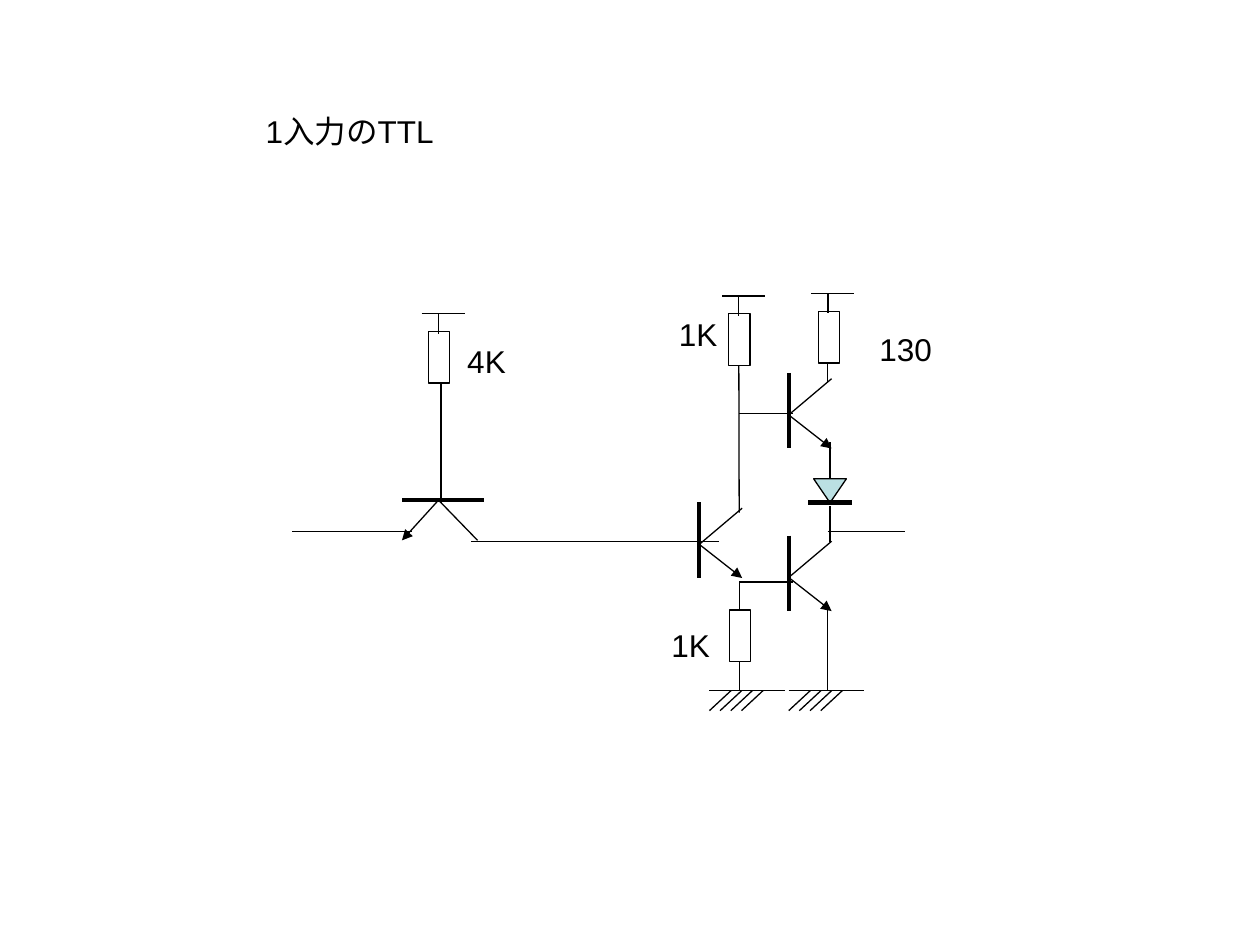
from dataclasses import dataclass

from lxml import etree
from pptx import Presentation
from pptx.dml.color import RGBColor
from pptx.enum.shapes import MSO_CONNECTOR, MSO_SHAPE
from pptx.oxml.ns import qn
from pptx.util import Pt

STRAIGHT = MSO_CONNECTOR.STRAIGHT
RECTANGLE = MSO_SHAPE.RECTANGLE
TRIANGLE = MSO_SHAPE.ISOSCELES_TRIANGLE


@dataclass(frozen=True)
class Theme:
    ink: RGBColor = RGBColor(0, 0, 0)
    diode: RGBColor = RGBColor(0xBB, 0xE0, 0xE3)
    font: str = "Arial"
    text_size: float = 18
    thin: float = 0.75
    base_bar: float = 2.25
    diode_bar: float = 3


class Circuit:
    def __init__(self, slide, theme):
        self.slide = slide
        self.theme = theme

    def wire(self, x1, y1, x2, y2, width=None, arrow=False):
        connector = self.slide.shapes.add_connector(
            STRAIGHT, Pt(x1), Pt(y1), Pt(x2), Pt(y2))
        connector.line.color.rgb = self.theme.ink
        connector.line.width = Pt(width or self.theme.thin)
        if arrow:
            line = connector.line._get_or_add_ln()
            etree.SubElement(line, qn("a:tailEnd"), type="triangle")
        etree.SubElement(connector._element.spPr, qn("a:effectLst"))

    def outline(self, kind, left, top, width, height, fill=None):
        shape = self.slide.shapes.add_shape(
            kind, Pt(left), Pt(top), Pt(width), Pt(height))
        shape.shadow.inherit = False
        shape.line.color.rgb = self.theme.ink
        shape.line.width = Pt(self.theme.thin)
        if fill is None:
            shape.fill.background()
        else:
            shape.fill.solid()
            shape.fill.fore_color.rgb = fill
        return shape

    def resistor(self, left, top):
        self.outline(RECTANGLE, left, top, 12.2, 29.5)

    def pull_up(self, left, top):
        self.wire(left, top, left + 24.5, top)
        self.wire(left + 9.4, top, left + 9.4, top + 11.3)
        self.resistor(left + 3.9, top + 10.1)

    def transistor(self, left, top):
        middle = top + 24
        self.wire(left, top, left, top + 43.2, self.theme.base_bar)
        self.wire(left + 24.5, top + 3.3, left, middle)
        self.wire(left, middle, left + 24.5, top + 43.2, arrow=True)

    def input_transistor(self, left, top):
        base = left + 20.9
        self.wire(left + 46.8, top, left, top, self.theme.base_bar)
        self.wire(left + 43.2, top + 23, base, top)
        self.wire(base, top, left, top + 23, arrow=True)

    def diode(self, center, top):
        triangle = self.outline(
            TRIANGLE, center - 9.35, top, 18.7, 13.7, self.theme.diode)
        triangle.rotation = 180
        self.wire(center + 12.4, top + 13.7, center - 12.4, top + 13.7,
                  self.theme.diode_bar)
        self.wire(center, top - 20.9, center, top)
        self.wire(center, top + 15.8, center, top + 36)

    def ground(self, left, top):
        self.wire(left, top, left + 43.2, top)
        for index in range(4):
            foot = left + 6.1 * index
            self.wire(foot + 12.4, top, foot, top + 11.5)

    def label(self, text, left, top, width, wrap=False):
        box = self.slide.shapes.add_textbox(
            Pt(left), Pt(top), Pt(width), Pt(28.8))
        box.text_frame.word_wrap = wrap
        box.text_frame.text = text
        for run in box.text_frame.paragraphs[0].runs:
            run.font.name = self.theme.font
            run.font.size = Pt(self.theme.text_size)
            run.font.color.rgb = self.theme.ink


def main():
    presentation = Presentation()
    presentation.slide_width = Pt(720)
    presentation.slide_height = Pt(540)
    slide = presentation.slides.add_slide(presentation.slide_layouts[6])
    circuit = Circuit(slide, Theme())

    for left, top in ((450.7, 306), (399.6, 287.1), (450.7, 213.1)):
        circuit.transistor(left, top)
    circuit.input_transistor(229.7, 285.8)
    for left, top in ((463.7, 167.8), (412.6, 169.2), (241, 179.3)):
        circuit.pull_up(left, top)
    circuit.resistor(416.7, 348.5)
    circuit.diode(474.3, 273.6)
    for left in (405.4, 450.7):
        circuit.ground(left, 394.6)

    wires = (
        (473, 347, 473, 394.6),
        (473, 207.4, 473, 218.9),
        (422.4, 332.6, 452.9, 332.6),
        (422.4, 332.6, 422.4, 349.2),
        (422.4, 378, 422.4, 394.6),
        (422.2, 208.8, 422.4, 293),
        (422.4, 236.2, 452.9, 236.2),
        (252, 218.9, 252, 287.3),
        (235.4, 303.8, 167, 303.8),
        (269.3, 309.6, 411.1, 309.6),
        (473, 303.8, 517, 303.8),
    )
    for ends in wires:
        circuit.wire(*ends)

    circuit.label("1入力のTTL", 144.7, 60.5, 111.6, wrap=True)
    labels = (
        ("4K", 259.9, 192.2, 36.7),
        ("1K", 380.9, 176.4, 36.7),
        ("1K", 376.6, 354.2, 36.7),
        ("130", 495.4, 185, 44.6),
    )
    for text, left, top, width in labels:
        circuit.label(text, left, top, width)

    presentation.save("out.pptx")


if __name__ == "__main__":
    main()
